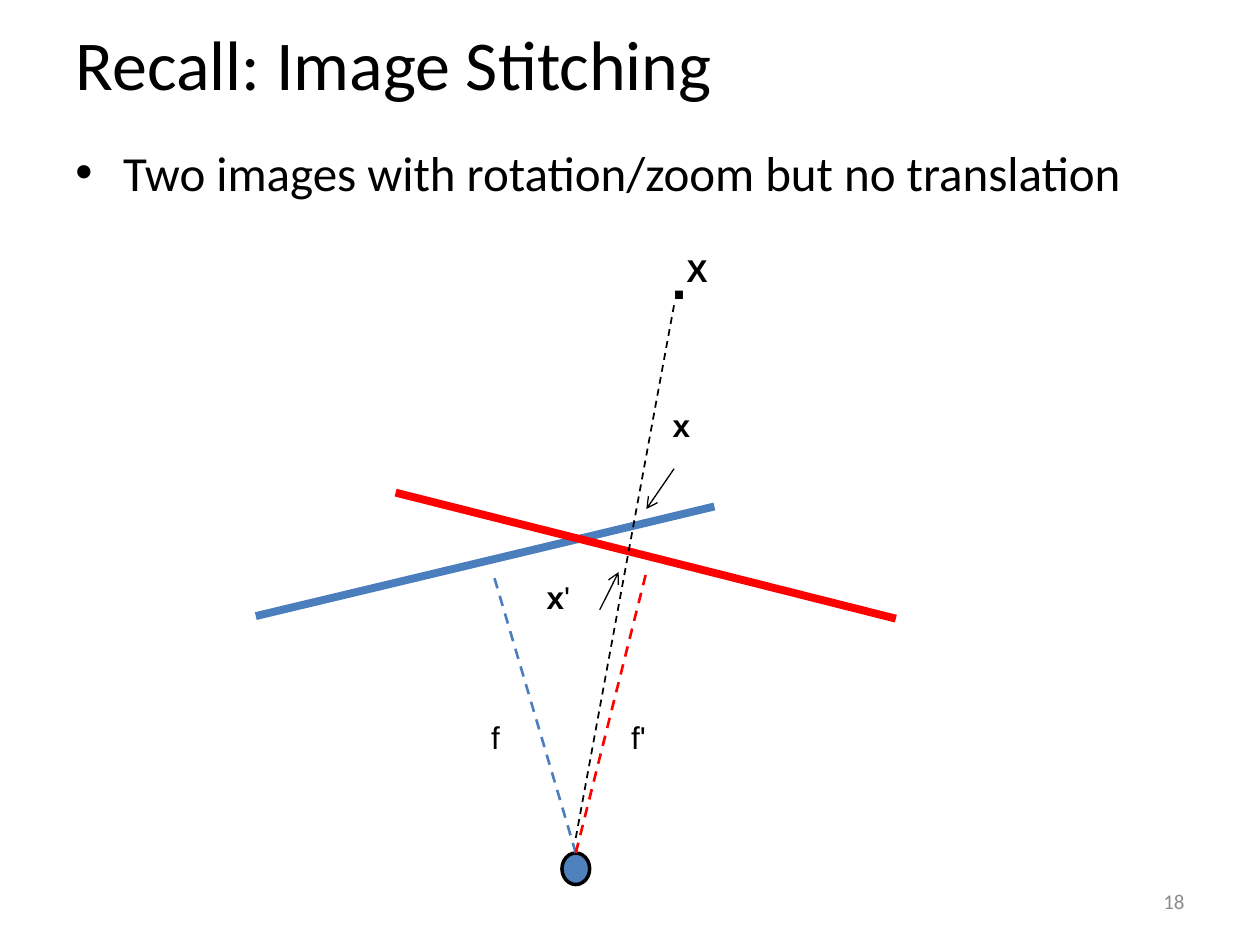
from typing import NamedTuple, Optional

from lxml import etree
from pptx import Presentation
from pptx.dml.color import RGBColor
from pptx.enum.dml import MSO_LINE
from pptx.enum.shapes import MSO_CONNECTOR, MSO_SHAPE
from pptx.enum.text import MSO_ANCHOR, PP_ALIGN
from pptx.oxml.ns import qn
from pptx.util import Inches, Pt

BLACK = RGBColor(0, 0, 0)
RED = RGBColor(0xFF, 0, 0)
BLUE = RGBColor(0x4B, 0x7E, 0xBC)
FILL = RGBColor(0x4F, 0x81, 0xBD)
GRAY = RGBColor(0x8C, 0x8C, 0x8C)
DASH = MSO_LINE.DASH
STRAIGHT = MSO_CONNECTOR.STRAIGHT
OVAL = MSO_SHAPE.OVAL
MIDDLE = MSO_ANCHOR.MIDDLE
LEFT, RIGHT = PP_ALIGN.LEFT, PP_ALIGN.RIGHT
TOP = 0


class Line(NamedTuple):
    start: tuple
    end: tuple
    color: RGBColor
    width: float
    dashed: bool = False
    arrow: bool = False


class Label(NamedTuple):
    box: tuple
    runs: tuple  # (text, bold) pairs
    size: float = 18


EYE = (4.57, 6.77)
PLANES = (
    Line((2.03, 4.89), (5.67, 4.02), BLUE, 4.5),
    Line((3.14, 3.91), (7.11, 4.91), RED, 4.5),
)
AXES = (
    Line(EYE, (3.91, 4.54), BLUE, 1.5, dashed=True),
    Line(EYE, (5.13, 4.54), RED, 1.5, dashed=True),
)
RAYS = (
    Line((4.57, 6.65), (5.35, 2.42), BLACK, 1, dashed=True),
    Line((4.76, 4.84), (4.91, 4.54), BLACK, 0.75, arrow=True),
    Line((5.35, 3.72), (5.13, 4.04), BLACK, 0.75, arrow=True),
)
LABELS = (
    Label((3.8, 5.65, 0.36, 0.6), (("f", False),)),
    Label((4.91, 5.65, 0.42, 0.6), (("f'", False),)),
    Label((5.23, 1.88, 0.43, 0.95), ((".", True),), 32),
    Label((5.24, 3.17, 0.45, 0.6), (("x", True),)),
    Label((4.24, 4.54, 0.52, 0.6), (("x", True), ("'", False))),
    Label((5.35, 1.94, 0.49, 0.6), (("X", True),)),
)


def style(font, color: RGBColor = BLACK, **values) -> None:
    for name, value in values.items():
        setattr(font, name, value)
    font.color.rgb = color


def add_text(slide, box: tuple):
    frame = slide.shapes.add_textbox(*map(Inches, box)).text_frame
    frame.word_wrap = True
    return frame


def add_line(slide, item: Line, joint: Optional[object] = None) -> None:
    """Draw a line, its start joined to the top of joint if given."""
    ends = map(Inches, item.start + item.end)
    line = slide.shapes.add_connector(STRAIGHT, *ends)
    if joint is not None:
        line.begin_connect(joint, TOP)
    line.line.color.rgb = item.color
    line.line.width = Pt(item.width)
    if item.dashed:
        line.line.dash_style = DASH
    if item.arrow:
        etree.SubElement(line.line._get_or_add_ln(), qn("a:tailEnd"), type="arrow")
    etree.SubElement(line._element.spPr, qn("a:effectLst"))


def add_label(slide, item: Label) -> None:
    para = add_text(slide, item.box).paragraphs[0]
    for text, bold in item.runs:
        run = para.add_run()
        run.text = text
        style(run.font, name="Arial", size=Pt(item.size), bold=bold)


def add_title(slide) -> None:
    title = slide.shapes.title
    box = dict(left=0.5, top=0, width=9, height=1)
    for name, value in box.items():
        setattr(title, name, Inches(value))
    frame = title.text_frame
    frame.text = "Recall: Image Stitching"
    frame.vertical_anchor = MIDDLE
    para = frame.paragraphs[0]
    para.alignment = LEFT
    style(para.runs[0].font, name="Calibri", size=Pt(40))


def add_bullet(slide) -> None:
    para = add_text(slide, (0.5, 1.08, 9, 5.62)).paragraphs[0]
    props = para._p.get_or_add_pPr()
    indent = Inches(0.38)
    props.set("marL", str(indent))
    props.set("indent", str(-indent))
    etree.SubElement(props, qn("a:buFont"), typeface="Arial")
    etree.SubElement(props, qn("a:buChar"), char="•")
    run = para.add_run()
    run.text = "Two images with rotation/zoom but no translation"
    style(run.font, name="Calibri", size=Pt(28))


def add_eye(slide):
    """Draw the shared camera centre."""
    wide, high = 0.22, 0.25
    box = (EYE[0] - wide / 2, EYE[1], wide, high)
    eye = slide.shapes.add_shape(OVAL, *map(Inches, box))
    eye.shadow.inherit = False
    eye.fill.solid()
    eye.fill.fore_color.rgb = FILL
    eye.line.color.rgb = BLACK
    eye.line.width = Pt(2)
    return eye


def add_number(slide) -> None:
    frame = add_text(slide, (7.17, 6.95, 2.33, 0.4))
    frame.vertical_anchor = MIDDLE
    para = frame.paragraphs[0]
    para.alignment = RIGHT
    run = para.add_run()
    run.text = "18"
    style(run.font, GRAY, name="Calibri", size=Pt(12))


def main() -> None:
    deck = Presentation()
    deck.slide_width, deck.slide_height = Inches(10), Inches(7.5)
    slide = deck.slides.add_slide(deck.slide_layouts[5])
    add_title(slide)
    add_bullet(slide)
    for plane in PLANES:
        add_line(slide, plane)
    eye = add_eye(slide)
    for axis in AXES:
        add_line(slide, axis, eye)
    for ray in RAYS:
        add_line(slide, ray)
    for label in LABELS:
        add_label(slide, label)
    add_number(slide)
    deck.save("out.pptx")


if __name__ == "__main__":
    main()
